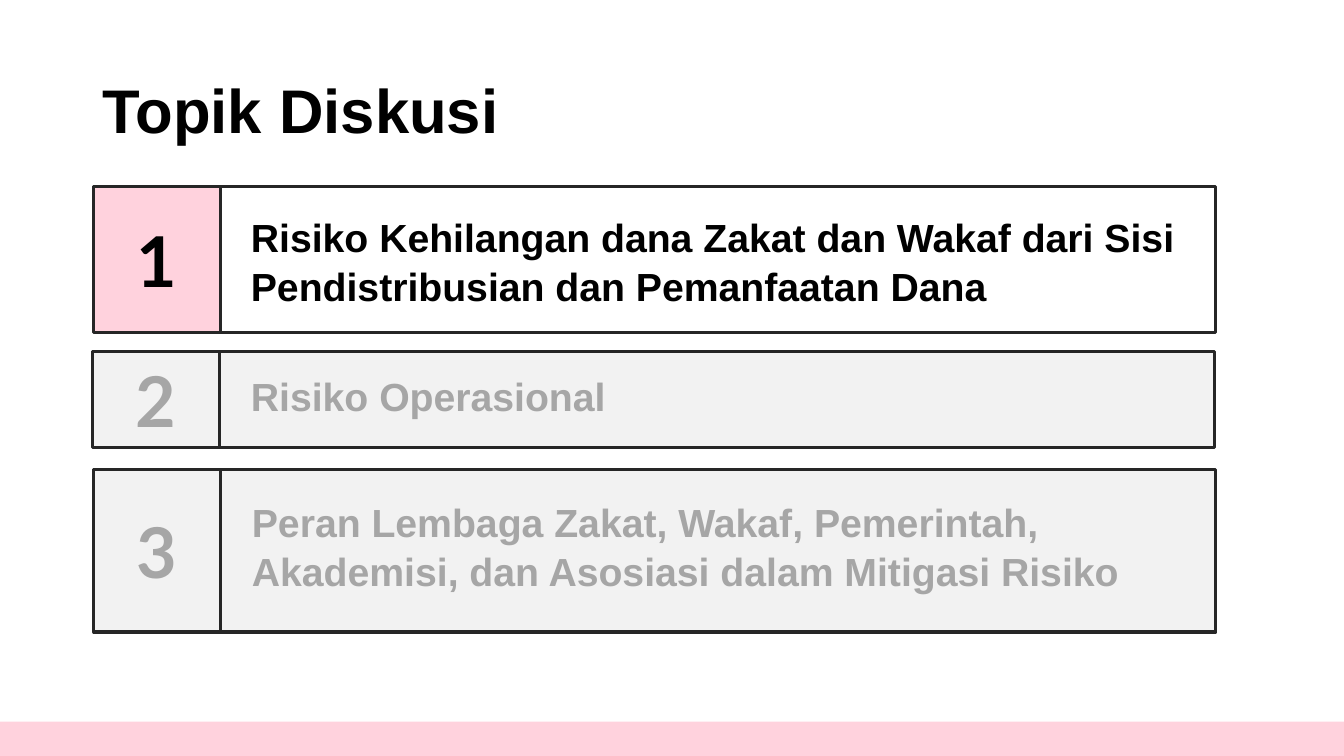
from dataclasses import dataclass

from pptx import Presentation
from pptx.dml.color import RGBColor
from pptx.enum.shapes import MSO_SHAPE
from pptx.enum.text import MSO_ANCHOR, PP_ALIGN
from pptx.util import Inches, Pt


@dataclass(frozen=True)
class Theme:
    pink: str = "FFD2DD"
    white: str = "FFFFFF"
    black: str = "000000"
    border: str = "262626"
    muted_fill: str = "F2F2F2"
    muted_text: str = "A6A6A6"
    text_font: str = "Arial"
    number_font: str = "Lato"
    title_size: int = 44
    number_size: int = 50
    topic_size: int = 28
    border_width: float = 2.25


class Agenda:
    """Holds the theme and the current slide."""

    def __init__(self, theme, slide):
        self.theme = theme
        self.slide = slide

    def box(self, left, top, width, height, fill, bordered=True):
        panel = self.slide.shapes.add_shape(
            MSO_SHAPE.RECTANGLE, *map(Inches, (left, top, width, height)))
        panel.shadow.inherit = False
        panel.fill.solid()
        panel.fill.fore_color.rgb = RGBColor.from_string(fill)
        if bordered:
            panel.line.color.rgb = RGBColor.from_string(self.theme.border)
            panel.line.width = Pt(self.theme.border_width)
        else:
            panel.line.fill.background()
        return panel

    def set_wording(self, holder, wording, font, size, color,
                    anchor=MSO_ANCHOR.TOP, align=PP_ALIGN.LEFT, spacing=1.0):
        frame = holder.text_frame
        frame.word_wrap = True
        frame.vertical_anchor = anchor
        paragraph = frame.paragraphs[0]
        paragraph.alignment = align
        paragraph.line_spacing = spacing
        run = paragraph.add_run()
        run.text = wording
        run.font.color.rgb = RGBColor.from_string(color)
        for name, value in {"name": font, "size": Pt(size), "bold": True}.items():
            setattr(run.font, name, value)

    def label(self, left, top, width, height, wording, size, color, **layout):
        holder = self.slide.shapes.add_textbox(
            *map(Inches, (left, top, width, height)))
        self.set_wording(holder, wording, self.theme.text_font, size, color, **layout)

    def topic(self, number, wording, left, top, height, text_at, active):
        theme = self.theme
        number_width, topic_width = 1.26, 9.87
        number_fill = theme.pink if active else theme.muted_fill
        topic_fill = theme.white if active else theme.muted_fill
        color = theme.black if active else theme.muted_text
        # Number cell, topic cell, topic wording
        number_cell = self.box(left, top, number_width, height, number_fill)
        self.set_wording(number_cell, str(number), theme.number_font,
                         theme.number_size, color, MSO_ANCHOR.MIDDLE,
                         PP_ALIGN.CENTER)
        self.box(left + number_width, top, topic_width, height, topic_fill)
        self.label(*text_at, wording, theme.topic_size, color, spacing=1.05)


TOPICS = [
    # wording, left, top, height, place of the wording
    ("Risiko Kehilangan dana Zakat dan Wakaf dari Sisi "
     "Pendistribusian dan Pemanfaatan Dana",
     0.93, 1.85, 1.45, (2.39, 2.04, 9.48, 1.04)),
    ("Risiko Operasional",
     0.92, 3.49, 0.95, (2.39, 3.62, 9.28, 0.57)),
    ("Peran Lembaga Zakat, Wakaf, Pemerintah, "
     "Akademisi, dan Asosiasi dalam Mitigasi Risiko",
     0.93, 4.66, 1.61, (2.4, 4.87, 9.27, 1.04)),
]
ACTIVE_TOPIC = 1


def main():
    deck = Presentation()
    deck.slide_width, deck.slide_height = Inches(13.33), Inches(7.5)
    theme = Theme()
    agenda = Agenda(theme, deck.slides.add_slide(deck.slide_layouts[6]))

    # Footer band
    agenda.box(0, 7.16, 13.33, 0.34, theme.pink, bordered=False)

    # Title
    agenda.label(0.92, 0.4, 11.5, 1.45, "Topik Diskusi", theme.title_size,
                 theme.black, anchor=MSO_ANCHOR.MIDDLE, spacing=0.9)

    # Topics
    for number, topic in enumerate(TOPICS, start=1):
        agenda.topic(number, *topic, active=number == ACTIVE_TOPIC)

    deck.save("out.pptx")


if __name__ == "__main__":
    main()
